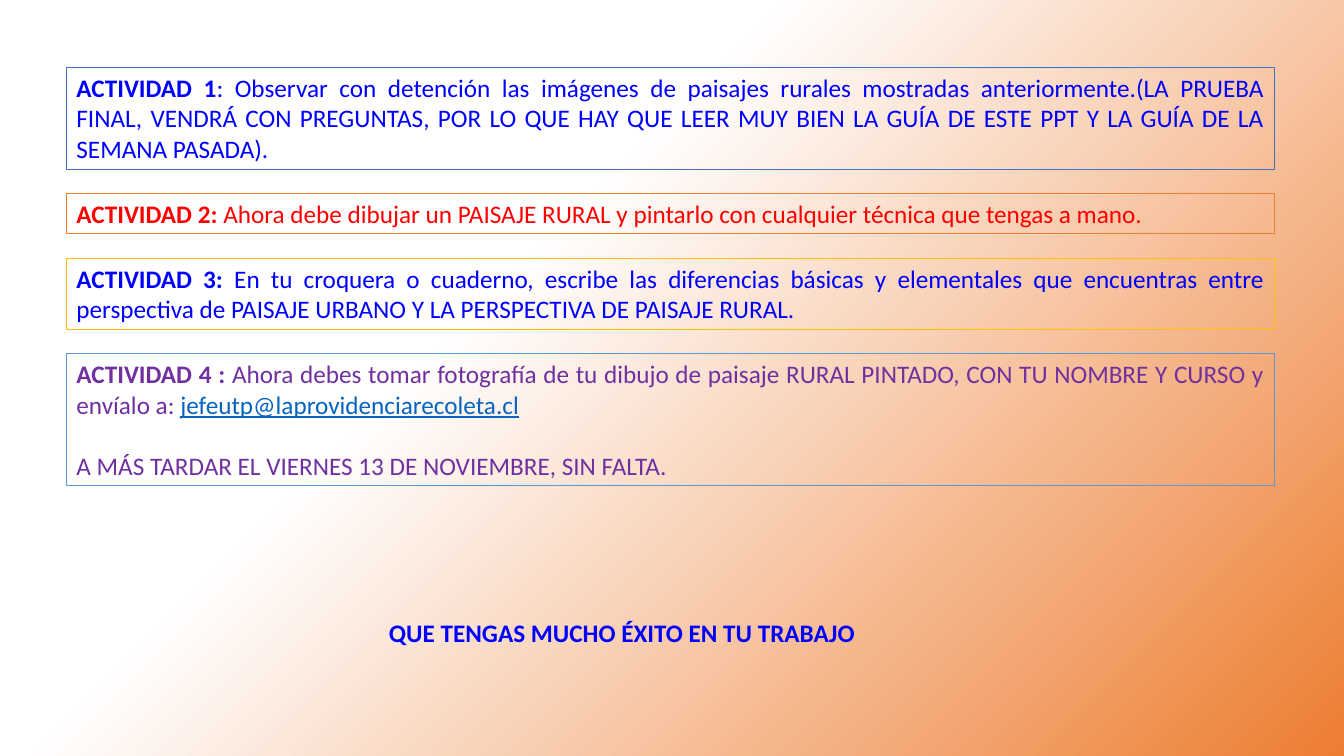
from lxml import etree
from pptx import Presentation
from pptx.dml.color import RGBColor
from pptx.enum.shapes import MSO_SHAPE
from pptx.enum.text import MSO_ANCHOR, MSO_AUTO_SIZE, PP_ALIGN
from pptx.oxml.ns import qn
from pptx.util import Inches, Pt

RECTANGLE = MSO_SHAPE.RECTANGLE
TOP = MSO_ANCHOR.TOP
GROW = MSO_AUTO_SIZE.SHAPE_TO_FIT_TEXT
LEFT = PP_ALIGN.LEFT
JUSTIFY = PP_ALIGN.JUSTIFY

COLORS = {
    "white": "FFFFFF",
    "orange": "ED7D31",
    "steel": "4472C4",
    "gold": "FFC000",
    "sky": "5B9BD5",
    "blue": "0000FF",
    "red": "FF0000",
    "purple": "7030A0",
    "link": "0563C1",
}
BOX_LEFT, BOX_TOP, BOX_WIDTH, BOX_GAP = 0.66, 0.67, 11.98, 0.24

ACTIVITIES = [
    {"height": 1.01, "line": "steel", "color": "blue", "align": JUSTIFY,
     "title": "ACTIVIDAD 1",
     "body": ": Observar con detención las imágenes de paisajes rurales mostradas "
             "anteriormente.(LA PRUEBA FINAL, VENDRÁ CON PREGUNTAS, POR LO QUE HAY QUE "
             "LEER MUY BIEN LA GUÍA DE ESTE PPT Y LA GUÍA DE LA SEMANA PASADA)."},
    {"height": 0.4, "line": "orange", "color": "red", "align": LEFT,
     "title": "ACTIVIDAD 2: ",
     "body": "Ahora debe dibujar un PAISAJE RURAL y pintarlo con cualquier técnica "
             "que tengas a mano."},
    {"height": 0.71, "line": "gold", "color": "blue", "align": JUSTIFY,
     "title": "ACTIVIDAD 3:",
     "body": " En tu croquera o cuaderno, escribe las diferencias básicas y elementales "
             "que encuentras entre perspectiva de PAISAJE URBANO Y LA PERSPECTIVA DE "
             "PAISAJE RURAL."},
    {"height": 1.31, "line": "sky", "color": "purple", "align": JUSTIFY,
     "title": "ACTIVIDAD 4 : ",
     "body": "Ahora debes tomar fotografía de tu dibujo de paisaje RURAL PINTADO, CON TU "
             "NOMBRE Y CURSO y envíalo a: ",
     "email": "jefeutp@laprovidenciarecoleta.cl",
     "deadline": "A MÁS TARDAR EL VIERNES 13 DE NOVIEMBRE, SIN FALTA."},
]


def rgb(name):
    return RGBColor.from_string(COLORS[name])


def paint_background(page):
    page.background.fill.gradient()
    gradient = page.element.find(".//" + qn("a:gradFill"))
    for child in list(gradient):
        gradient.remove(child)
    stops = etree.SubElement(gradient, qn("a:gsLst"))
    for position, name in [(0, "white"), (37, "white"), (100, "orange")]:
        stop = etree.SubElement(stops, qn("a:gs"), pos=str(position * 1000))
        etree.SubElement(stop, qn("a:srgbClr"), val=COLORS[name])
    circle = etree.SubElement(gradient, qn("a:path"), path="circle")
    etree.SubElement(circle, qn("a:fillToRect"), r="100000", b="100000")
    etree.SubElement(gradient, qn("a:tileRect"), l="-100000", t="-100000")


def add_span(para, text, color, bold=False, underline=False):
    span = para.add_run()
    span.text = text
    span.font.name = "Calibri"
    span.font.size = Pt(18)
    span.font.bold = bold
    span.font.underline = underline
    span.font.color.rgb = rgb(color)


def prepare_frame(box):
    frame = box.text_frame
    frame.word_wrap = True
    frame.auto_size = GROW
    frame.vertical_anchor = TOP
    return frame


def add_activity(page, top, activity):
    box = page.shapes.add_shape(RECTANGLE, Inches(BOX_LEFT), Inches(top),
                                Inches(BOX_WIDTH), Inches(activity["height"]))
    box.shadow.inherit = False
    box.fill.background()
    box.line.color.rgb = rgb(activity["line"])
    box.line.width = Pt(0.75)
    frame = prepare_frame(box)
    para = frame.paragraphs[0]
    para.alignment = activity["align"]
    add_span(para, activity["title"], activity["color"], bold=True)
    add_span(para, activity["body"], activity["color"])
    if "email" in activity:
        add_span(para, activity["email"], "link", underline=True)
    if "deadline" in activity:
        para = frame.add_paragraph()
        para.alignment = activity["align"]
        para.space_before = Pt(22)
        add_span(para, activity["deadline"], activity["color"])


def add_closing(page, text):
    box = page.shapes.add_textbox(Inches(3.76), Inches(6.08), Inches(4.94), Inches(0.4))
    add_span(prepare_frame(box).paragraphs[0], text, "blue", bold=True)


def main():
    deck = Presentation()
    deck.slide_width = Inches(13.33)
    deck.slide_height = Inches(7.5)
    page = deck.slides.add_slide(deck.slide_layouts[6])
    paint_background(page)
    top = BOX_TOP
    for activity in ACTIVITIES:
        add_activity(page, top, activity)
        top += activity["height"] + BOX_GAP
    add_closing(page, "QUE TENGAS MUCHO ÉXITO EN TU TRABAJO")
    deck.save("out.pptx")


if __name__ == "__main__":
    main()
